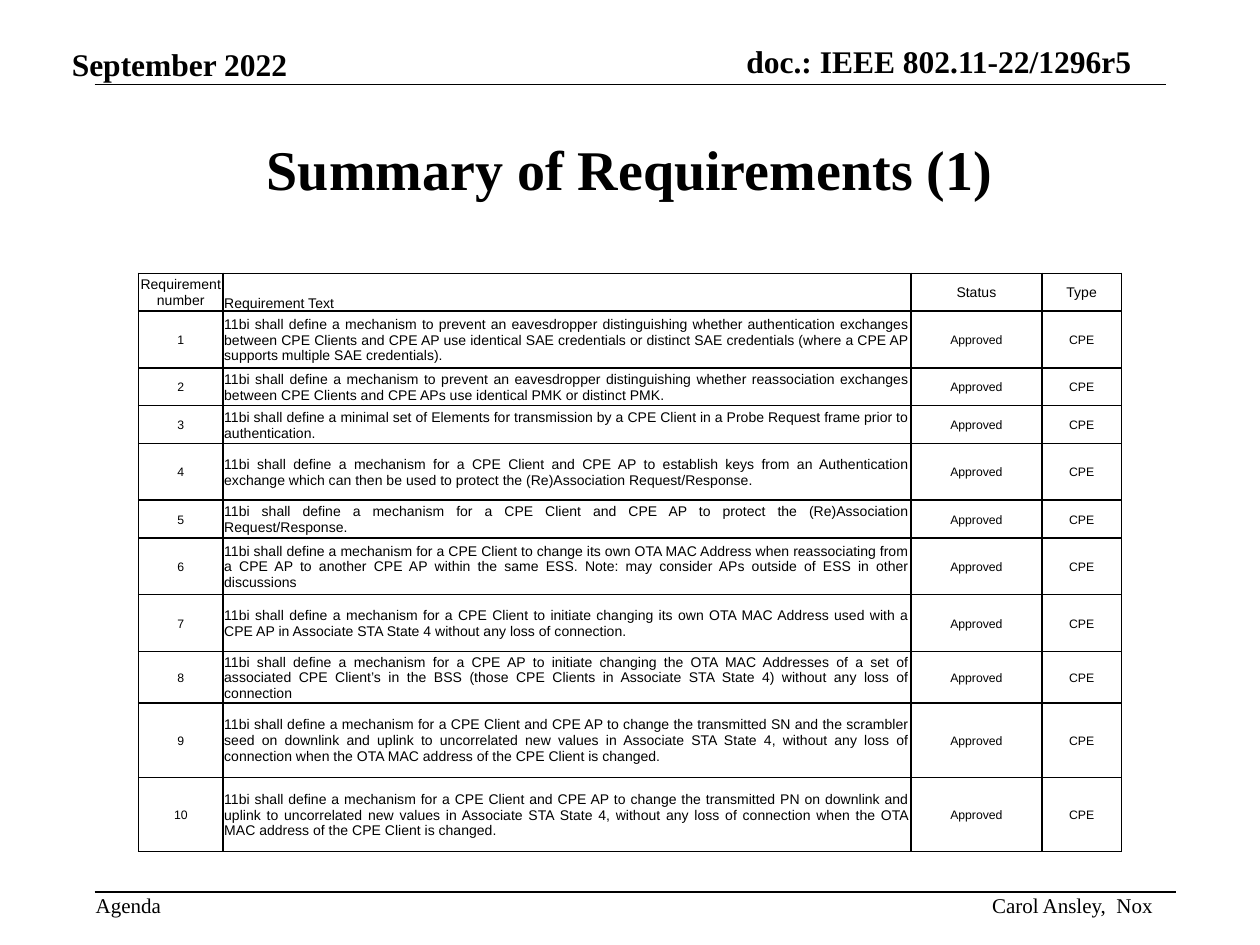
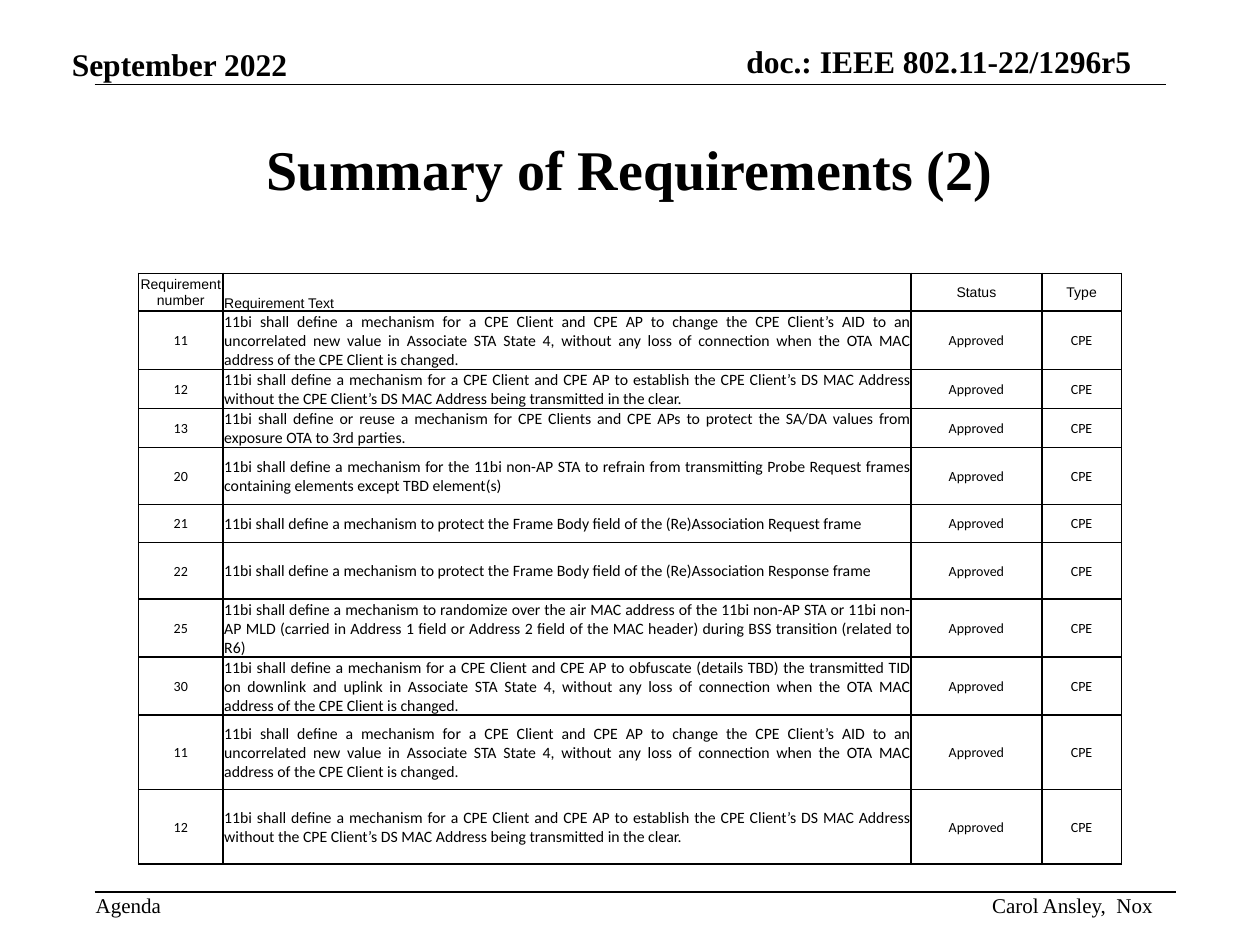
from collections import namedtuple

from lxml import etree
from pptx import Presentation
from pptx.dml.color import RGBColor
from pptx.enum.shapes import MSO_CONNECTOR
from pptx.enum.text import MSO_ANCHOR, MSO_AUTO_SIZE, PP_ALIGN
from pptx.oxml.ns import qn
from pptx.util import Inches, Pt

LEFT, CENTER, RIGHT, JUSTIFY = PP_ALIGN.LEFT, PP_ALIGN.CENTER, PP_ALIGN.RIGHT, PP_ALIGN.JUSTIFY
TOP, MIDDLE, BOTTOM = MSO_ANCHOR.TOP, MSO_ANCHOR.MIDDLE, MSO_ANCHOR.BOTTOM
GROW, FIXED = MSO_AUTO_SIZE.SHAPE_TO_FIT_TEXT, MSO_AUTO_SIZE.NONE
STRAIGHT = MSO_CONNECTOR.STRAIGHT

# The slide is a grid of 100 columns by 75 rows of square units.
GRID_COLUMNS, GRID_ROWS = 100, 75
UNIT = Inches(10) // GRID_COLUMNS

Box = namedtuple("Box", "left top width height")
HEADER = Box(7.5, 3.3, 85, 3.4)
TITLE = Box(7.5, 7.5, 85, 11.7)
TABLE = Box(11, 21.7, 78, 44.8)
FOOTER = Box(7.5, 70.8, 85.8, 2)

INK = "000000"
SERIF = "Times New Roman"
HEADER_FONT = {"name": SERIF, "size": Pt(18), "bold": True}
TITLE_FONT = {"name": SERIF, "size": Pt(32), "bold": True}
FOOTER_FONT = {"name": SERIF, "size": Pt(12), "bold": False}

COLUMN_WIDTHS = [6.7, 54.6, 10.4, 6.3]
ROW_HEIGHTS = [3, 4.5, 3, 3, 4.5, 3, 4.5, 4.5, 3, 5.9, 5.9]
COLUMN_HEADS = ["Requirement number", "Requirement Text", "Status", "Type"]
CELL_MARGINS = {"margin_left": 0.1, "margin_right": 0.1, "margin_top": 0.1, "margin_bottom": 0}
TEXT_COLUMN = 1

FIRST_REQUIREMENTS = [
    (1, "11bi shall define a mechanism to prevent an eavesdropper distinguishing whether authentication "
        "exchanges between CPE Clients and CPE AP use identical SAE credentials or distinct SAE credentials "
        "(where a CPE AP supports multiple SAE credentials)."),
    (2, "11bi shall define a mechanism to prevent an eavesdropper distinguishing whether reassociation "
        "exchanges between CPE Clients and CPE APs use identical PMK or distinct PMK."),
    (3, "11bi shall define a minimal set of Elements for transmission by a CPE Client in a Probe Request "
        "frame prior to authentication."),
    (4, "11bi shall define a mechanism for a CPE Client and CPE AP to establish keys from an Authentication "
        "exchange which can then be used to protect the (Re)Association Request/Response."),
    (5, "11bi shall define a mechanism for a CPE Client and CPE AP to protect the (Re)Association "
        "Request/Response."),
    (6, "11bi shall define a mechanism for a CPE Client to change its own OTA MAC Address when "
        "reassociating from a CPE AP to another CPE AP within the same ESS. Note: may consider APs outside "
        "of ESS in other discussions"),
    (7, "11bi shall define a mechanism for a CPE Client to initiate changing its own OTA MAC Address used "
        "with a CPE AP in Associate STA State 4 without any loss of connection."),
    (8, "11bi shall define a mechanism for a CPE AP to initiate changing the OTA MAC Addresses of a set of "
        "associated CPE Client’s in the BSS (those CPE Clients in Associate STA State 4) without any loss "
        "of connection"),
    (9, "11bi shall define a mechanism for a CPE Client and CPE AP to change the transmitted SN and the "
        "scrambler seed on downlink and uplink to uncorrelated new values in Associate STA State 4, without "
        "any loss of connection when the OTA MAC address of the CPE Client is changed."),
    (10, "11bi shall define a mechanism for a CPE Client and CPE AP to change the transmitted PN on downlink "
         "and uplink to uncorrelated new values in Associate STA State 4, without any loss of connection "
         "when the OTA MAC address of the CPE Client is changed."),
]
REPEATED_REQUIREMENTS = [
    (11, "11bi shall define a mechanism for a CPE Client and CPE AP to change the CPE Client’s AID to an "
         "uncorrelated new value in Associate STA State 4, without any loss of connection when the OTA MAC "
         "address of the CPE Client is changed."),
    (12, "11bi shall define a mechanism for a CPE Client and CPE AP to establish the CPE Client’s DS MAC "
         "Address without the CPE Client’s DS MAC Address being transmitted in the clear."),
]
SECOND_REQUIREMENTS = [
    *REPEATED_REQUIREMENTS,
    (13, "11bi shall define or reuse a mechanism for CPE Clients and CPE APs to protect the SA/DA values "
         "from exposure OTA to 3rd parties."),
    (20, "11bi shall define a mechanism for the 11bi non-AP STA to refrain from transmitting Probe Request "
         "frames containing elements except TBD element(s)"),
    (21, "11bi shall define a mechanism to protect the Frame Body field of the (Re)Association Request frame"),
    (22, "11bi shall define a mechanism to protect the Frame Body field of the (Re)Association Response frame"),
    (25, "11bi shall define a mechanism to randomize over the air MAC address of the 11bi non-AP STA or 11bi "
         "non-AP MLD (carried in Address 1 field or Address 2 field of the MAC header) during BSS transition "
         "(related to R6)"),
    (30, "11bi shall define a mechanism for a CPE Client and CPE AP to obfuscate (details TBD) the "
         "transmitted TID on downlink and uplink in Associate STA State 4, without any loss of connection "
         "when the OTA MAC address of the CPE Client is changed."),
    *REPEATED_REQUIREMENTS,
]


def units(count):
    return round(count * UNIT)


def rgb(hex_color):
    return RGBColor.from_string(hex_color)


def set_all(target, values):
    for attribute, value in values.items():
        setattr(target, attribute, value)


def write(frame, text, font, align):
    paragraph = frame.paragraphs[0]
    paragraph.alignment = align
    run = paragraph.add_run()
    run.text = text
    set_all(run.font, font)
    run.font.color.rgb = rgb(INK)


def add_label(slide, box, text, font, align=LEFT, anchor=TOP, wrap=False):
    frame = slide.shapes.add_textbox(*map(units, box)).text_frame
    set_all(frame, {
        "margin_left": 0, "margin_right": 0, "margin_top": 0, "margin_bottom": 0,
        "word_wrap": wrap, "vertical_anchor": anchor, "auto_size": FIXED if wrap else GROW,
    })
    write(frame, text, font, align)


def add_rule(slide, left, top, width):
    rule = slide.shapes.add_connector(STRAIGHT, *map(units, (left, top, left + width, top)))
    rule.line.color.rgb = rgb(INK)
    rule.line.width = Pt(1)
    etree.SubElement(rule._element.spPr, qn("a:effectLst"))


def add_header(slide, box):
    date_box = Box(box.left - 1.8, box.top + 0.3, 17.3, 3)
    document_box = Box(box.left + 51.3, box.top, 31, 3)
    add_label(slide, date_box, "September 2022", HEADER_FONT, anchor=BOTTOM)
    add_label(slide, document_box, "doc.: IEEE 802.11-22/1296r5", HEADER_FONT, RIGHT, BOTTOM)
    add_rule(slide, box.left, box.top + box.height, box.width)


def add_footer(slide, box):
    add_rule(slide, box.left, box.top, box.width)
    add_label(slide, Box(box.left + 0.1, box.top, 5.3, box.height), "Agenda", FOOTER_FONT)
    add_label(slide, Box(box.left + 71, box.top, 13, box.height), "Carol Ansley,  Nox",
              FOOTER_FONT, RIGHT, BOTTOM)


def add_borders(cell):
    properties = cell._tc.get_or_add_tcPr()
    for side in ("lnL", "lnR", "lnT", "lnB"):
        border = etree.SubElement(properties, qn(f"a:{side}"), w=str(Pt(1)))
        fill = etree.SubElement(border, qn("a:solidFill"))
        etree.SubElement(fill, qn("a:srgbClr"), val=INK)


def fill_cell(cell, text, font, align=CENTER, anchor=MIDDLE):
    add_borders(cell)
    cell.fill.background()
    set_all(cell, {side: units(margin) for side, margin in CELL_MARGINS.items()})
    cell.vertical_anchor = anchor
    write(cell.text_frame, text, font, align)


def add_requirements(slide, box, requirements, font_name, text_size):
    """Side columns are set one point smaller than the requirement text."""
    table = slide.shapes.add_table(len(ROW_HEIGHTS), len(COLUMN_WIDTHS), *map(units, box)).table
    set_all(table, {"first_row": False, "horz_banding": False})
    for column, width in zip(table.columns, COLUMN_WIDTHS):
        column.width = units(width)
    for row, height in zip(table.rows, ROW_HEIGHTS):
        row.height = units(height)

    head_font = {"name": "Arial", "size": Pt(8)}
    for index, head in enumerate(COLUMN_HEADS):
        placing = (LEFT, BOTTOM) if index == TEXT_COLUMN else (CENTER, MIDDLE)
        fill_cell(table.cell(0, index), head, head_font, *placing)

    for row_index, (number, requirement) in enumerate(requirements, start=1):
        for index, text in enumerate([str(number), requirement, "Approved", "CPE"]):
            is_text = index == TEXT_COLUMN
            font = {"name": font_name, "size": Pt(text_size if is_text else text_size - 1)}
            fill_cell(table.cell(row_index, index), text, font, JUSTIFY if is_text else CENTER)


def add_summary_slide(deck, part, requirements, font_name, text_size):
    slide = deck.slides.add_slide(deck.slide_layouts[6])
    add_header(slide, HEADER)
    add_footer(slide, FOOTER)
    add_label(slide, TITLE, f"Summary of Requirements ({part})", TITLE_FONT, CENTER, MIDDLE, wrap=True)
    add_requirements(slide, TABLE, requirements, font_name, text_size)


def main():
    deck = Presentation()
    deck.slide_width, deck.slide_height = units(GRID_COLUMNS), units(GRID_ROWS)
    add_summary_slide(deck, 1, FIRST_REQUIREMENTS, "Arial", 8)
    add_summary_slide(deck, 2, SECOND_REQUIREMENTS, "Calibri", 9)
    deck.save("out.pptx")


if __name__ == "__main__":
    main()
